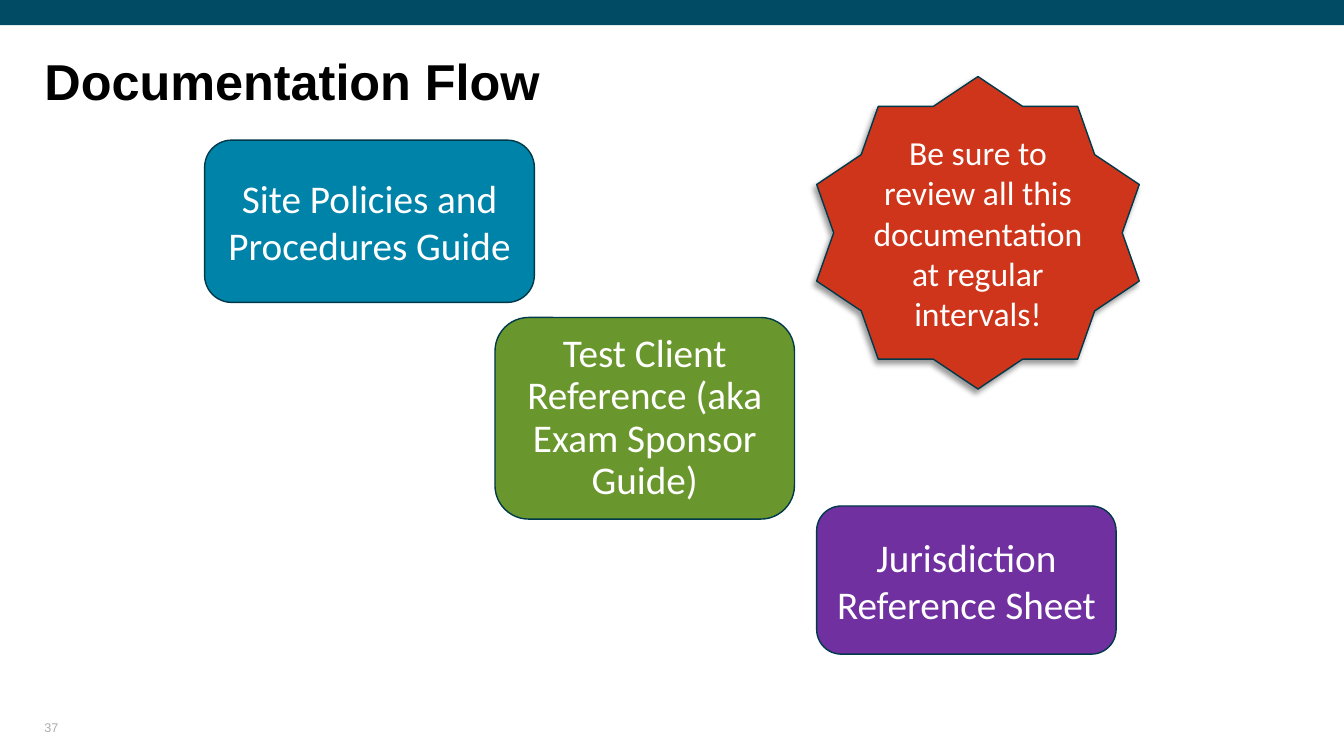
import pptx
import pptx.util
import pptx.dml.color
import pptx.enum.shapes
import pptx.enum.text
import pptx.oxml.ns
from lxml import etree
from pptx.util import Inches, Pt

COLORS = {
    "bar": "014B64", "title": "000000", "number": "AFABAB", "outline": "00394A",
    "text": "FFFFFF", "blue": "0083A9", "green": "6A972D", "purple": "7030A0",
    "red": "CF351B", "shadow": "000000",
}
SHAPE = pptx.enum.shapes.MSO_SHAPE
ALIGN = pptx.enum.text.PP_ALIGN
ANCHOR = pptx.enum.text.MSO_ANCHOR
CARDS = [
    ((2.03, 1.39, 3.27, 1.61), "blue", "Site Policies and Procedures Guide", 1.0),
    ((4.91, 3.15, 2.97, 2.0), "green", "Test Client Reference (aka Exam Sponsor Guide)", 0.9),
    ((8.1, 5.02, 2.97, 1.47), "purple", "Jurisdiction Reference Sheet", 1.0),
]


def rgb(name):
    """Return the named colour."""
    return pptx.dml.color.RGBColor.from_string(COLORS[name])


def write_text(tf, text, size, font, color, align, anchor, spacing=1.0, bold=False):
    """Fill a text frame with one formatted paragraph."""
    tf.text = text
    tf.word_wrap = True
    tf.auto_size = pptx.enum.text.MSO_AUTO_SIZE.NONE
    tf.vertical_anchor = anchor
    p = tf.paragraphs[0]
    p.alignment = align
    p.line_spacing = spacing
    p.space_before = Pt(0)
    r = p.runs[0]
    r.font.size = Pt(size)
    r.font.name = font
    r.font.bold = bold
    r.font.color.rgb = rgb(color)


def clear_margins(tf):
    """Remove the inner margins of a text frame."""
    tf.margin_left = tf.margin_top = tf.margin_right = tf.margin_bottom = 0


def add_bar(s, box):
    """Draw the band along the top of the slide."""
    sp = s.shapes.add_shape(SHAPE.RECTANGLE, *map(Inches, box))
    sp.shadow.inherit = False
    sp.fill.solid()
    sp.fill.fore_color.rgb = rgb("bar")
    sp.line.fill.background()


def set_title(s, box, text):
    """Place and format the title placeholder."""
    sp = s.shapes.title
    sp.left, sp.top, sp.width, sp.height = map(Inches, box)
    clear_margins(sp.text_frame)
    write_text(sp.text_frame, text, 36, "Arial", "title", ALIGN.LEFT, ANCHOR.TOP, 0.9, True)


def add_number(s, box, text):
    """Write the slide number."""
    tf = s.shapes.add_textbox(*map(Inches, box)).text_frame
    clear_margins(tf)
    write_text(tf, text, 9, "Arial", "number", ALIGN.LEFT, ANCHOR.BOTTOM)


def add_callout(s, box, kind, fill, text, size, spacing=1.0):
    """Draw an outlined shape with centred text."""
    sp = s.shapes.add_shape(kind, *map(Inches, box))
    sp.shadow.inherit = False
    sp.fill.solid()
    sp.fill.fore_color.rgb = rgb(fill)
    sp.line.color.rgb = rgb("outline")
    sp.line.width = Pt(1)
    write_text(sp.text_frame, text, size, "Calibri", "text", ALIGN.CENTER, ANCHOR.MIDDLE, spacing)
    return sp


def add_shadow(sp):
    """Cast a soft shadow to the lower left."""
    qn = pptx.oxml.ns.qn
    effects = sp.element.spPr.find(qn("a:effectLst"))
    shadow = etree.SubElement(effects, qn("a:outerShdw"), blurRad=str(Pt(4)),
                              dist=str(Pt(3)), dir=str(135 * 60000), rotWithShape="0")
    color = etree.SubElement(shadow, qn("a:srgbClr"), val=COLORS["shadow"])
    etree.SubElement(color, qn("a:alpha"), val="40000")


def main():
    """Build and save the slide."""
    prs = pptx.Presentation()
    prs.slide_width, prs.slide_height = Inches(13.33), Inches(7.5)
    s = prs.slides.add_slide(prs.slide_layouts[5])
    add_bar(s, (0, 0, 13.33, 0.25))
    set_title(s, (0.44, 0.57, 12.41, 1.27), "Documentation Flow")
    add_number(s, (0.44, 7.05, 3, 0.24), "37")
    for box, fill, text, spacing in CARDS:
        add_callout(s, box, SHAPE.ROUNDED_RECTANGLE, fill, text, 28, spacing)
    star = add_callout(s, (8.1, 0.76, 3.2, 3.1), SHAPE.STAR_10_POINT, "red",
                       "Be sure to review all this documentation at regular intervals!", 24)
    add_shadow(star)
    prs.save("out.pptx")


if __name__ == "__main__":
    main()
